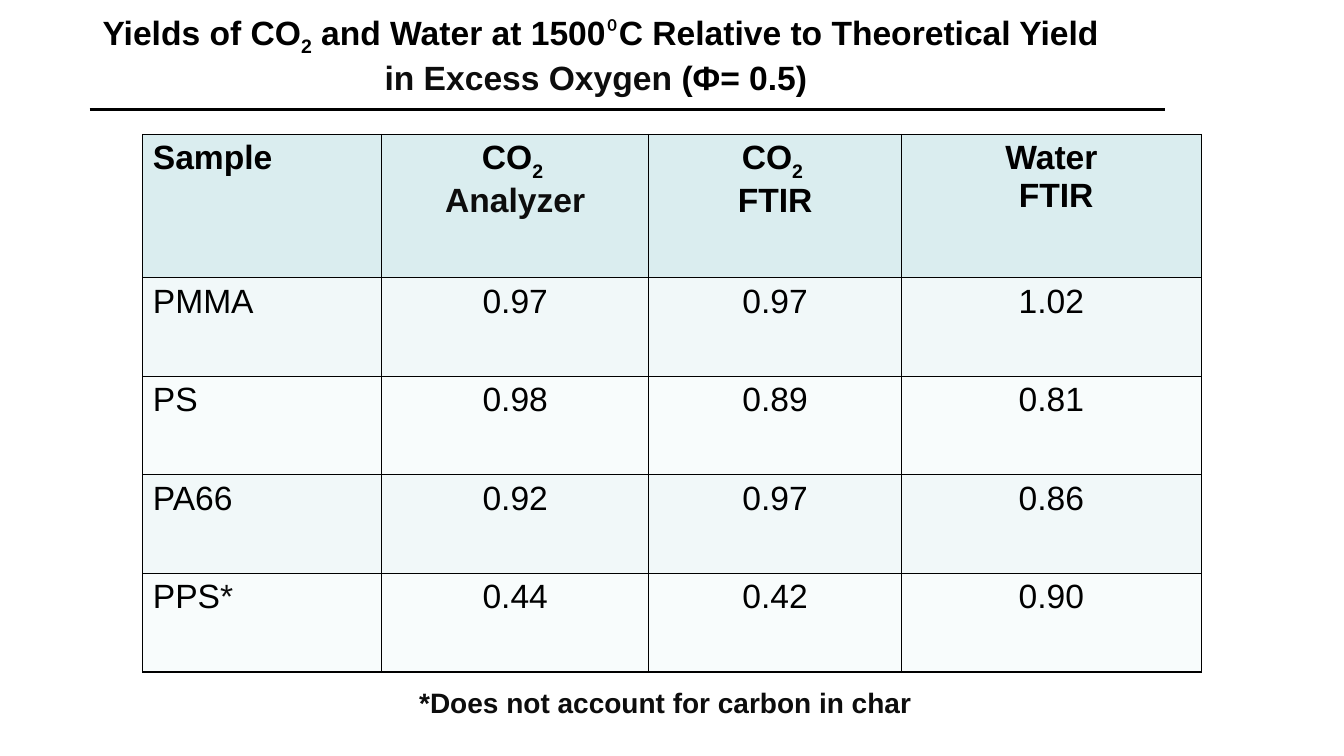
from pptx import Presentation
from pptx.dml.color import RGBColor
from pptx.enum.shapes import MSO_CONNECTOR
from pptx.enum.text import MSO_ANCHOR, MSO_AUTO_SIZE, PP_ALIGN
from pptx.oxml.ns import qn
from pptx.util import Pt
from lxml.etree import SubElement

COLORS = {
    "black": "000000",
    "ink": "0D0D0D",
    "header": "DAEDEF",
    "odd": "F1F8F9",
    "even": "F8FCFC",
}
COLUMN_WIDTHS = [170.7, 190.7, 180.7, 214]
HEADER_HEIGHT, ROW_HEIGHT = 102.4, 70.4
TITLE = [
    ("Yields of CO", {}),
    ("2", {"baseline": -25}),
    (" and Water at 1500", {}),
    ("⁰", {"font": "Calibri", "bold": False}),
    ("C Relative to Theoretical Yield ", {}),
    ("in Excess Oxygen ", {"color": "ink"}),
    ("(Φ= 0.5) ", {}),
]
CARBON_DIOXIDE = [("CO", {}), ("2 ", {"baseline": -25})]
HEADERS = [
    [[("Sample", {})]],
    [CARBON_DIOXIDE, [("Analyzer", {"color": "ink"})]],
    [CARBON_DIOXIDE, [("FTIR", {})]],
    [[("Water", {})], [(" FTIR", {})]],
]
YIELDS = [
    ("PMMA", "0.97", "0.97", "1.02"),
    ("PS", "0.98", "0.89", "0.81"),
    ("PA66", "0.92", "0.97", "0.86"),
    ("PPS*", "0.44", "0.42", "0.90"),
]


def write(paragraph, text, size=24, font="Arial", color="black", bold=True, baseline=0):
    """Append a formatted run to a paragraph."""
    run = paragraph.add_run()
    run.text = text
    run.font.size = Pt(size)
    run.font.name = font
    run.font.bold = bold
    run.font.color.rgb = RGBColor.from_string(COLORS[color])
    if baseline:
        run._r.get_or_add_rPr().set("baseline", str(baseline * 1000))


class YieldSlide:
    """Draw titles, rules, tables and notes on one slide."""

    def __init__(self, presentation):
        self.slide = presentation.slides.add_slide(presentation.slide_layouts[5])

    def title(self, runs, left, top, width, height):
        """Place the title and fill it with runs."""
        heading = self.slide.shapes.title
        heading.left, heading.top = Pt(left), Pt(top)
        heading.width, heading.height = Pt(width), Pt(height)
        frame = heading.text_frame
        frame.auto_size = MSO_AUTO_SIZE.NONE
        frame.vertical_anchor = MSO_ANCHOR.MIDDLE
        frame.paragraphs[0].alignment = PP_ALIGN.CENTER
        for text, style in runs:
            write(frame.paragraphs[0], text, **style)

    def rule(self, left, right, y):
        """Draw a horizontal rule."""
        underline = self.slide.shapes.add_connector(
            MSO_CONNECTOR.STRAIGHT, Pt(left), Pt(y), Pt(right), Pt(y))
        underline.line.color.rgb = RGBColor.from_string(COLORS["black"])
        underline.line.width = Pt(2.25)
        SubElement(underline._element.spPr, qn("a:effectLst"))

    def table(self, left, top):
        """Build the table of yields."""
        height = HEADER_HEIGHT + ROW_HEIGHT * len(YIELDS)
        yields = self.slide.shapes.add_table(
            len(YIELDS) + 1, len(COLUMN_WIDTHS),
            Pt(left), Pt(top), Pt(sum(COLUMN_WIDTHS)), Pt(height)).table
        yields.horz_banding = False
        for column, width in zip(yields.columns, COLUMN_WIDTHS):
            column.width = Pt(width)
        body = [[[[(value, {"bold": False})]] for value in row] for row in YIELDS]
        body[-1][0] = [[("PPS", {"bold": False}), ("*", {"bold": False, "color": "ink"})]]
        for r, row in enumerate([HEADERS] + body):
            yields.rows[r].height = Pt(ROW_HEIGHT if r else HEADER_HEIGHT)
            fill = ("odd" if r % 2 else "even") if r else "header"
            for c, lines in enumerate(row):
                self.cell(yields.cell(r, c), lines, fill, centered=c > 0)

    def cell(self, cell, lines, fill, centered):
        """Write, border and fill one table cell."""
        for i, runs in enumerate(lines):
            frame = cell.text_frame
            paragraph = frame.add_paragraph() if i else frame.paragraphs[0]
            paragraph.alignment = PP_ALIGN.CENTER if centered else PP_ALIGN.LEFT
            for text, style in runs:
                write(paragraph, text, **style)
        properties = cell._tc.get_or_add_tcPr()
        for side in ("lnL", "lnR", "lnT", "lnB"):
            border = SubElement(properties, qn(f"a:{side}"), w=str(Pt(1)))
            SubElement(SubElement(border, qn("a:solidFill")), qn("a:srgbClr"),
                       val=COLORS["black"])
        cell.fill.solid()
        cell.fill.fore_color.rgb = RGBColor.from_string(COLORS[fill])

    def note(self, text, left, top, width, height):
        """Add a one-line footnote."""
        footnote = self.slide.shapes.add_textbox(Pt(left), Pt(top), Pt(width), Pt(height))
        footnote.text_frame.word_wrap = False
        footnote.text_frame.auto_size = MSO_AUTO_SIZE.SHAPE_TO_FIT_TEXT
        write(footnote.text_frame.paragraphs[0], text, size=20, color="ink")


def main():
    """Build and save the slide."""
    presentation = Presentation()
    presentation.slide_width, presentation.slide_height = Pt(960), Pt(540)
    page = YieldSlide(presentation)
    page.rule(64, 832, 78)
    page.title(TITLE, 60, 12, 738, 54)
    page.table(102, 96)
    page.note("*Does not account for carbon in char", 292.3, 486, 374.4, 31.5)
    presentation.save("out.pptx")


if __name__ == "__main__":
    main()
